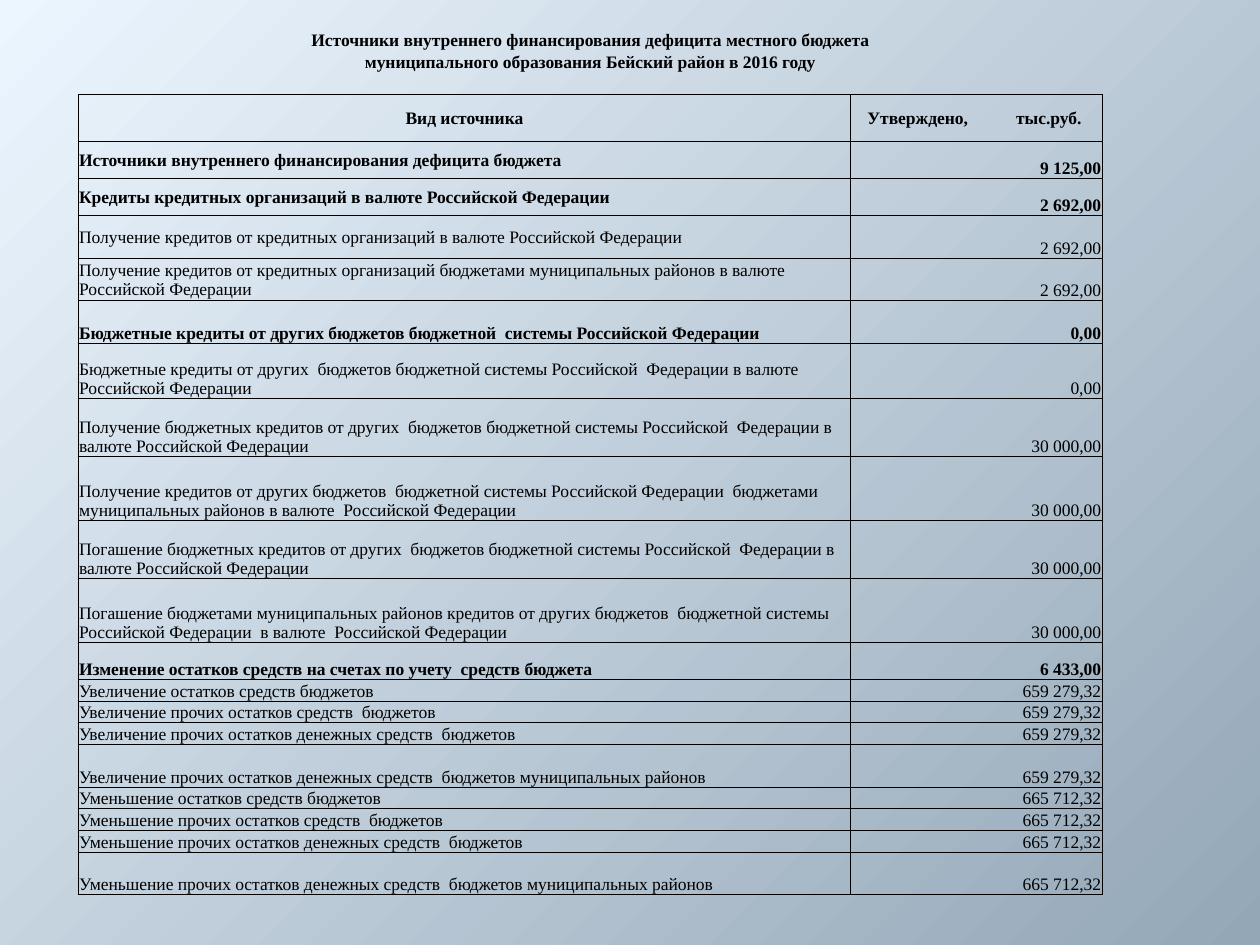
from dataclasses import dataclass
from lxml.etree import SubElement
from pptx import Presentation
from pptx.dml.color import RGBColor
from pptx.enum.text import MSO_ANCHOR, PP_ALIGN
from pptx.oxml.ns import qn
from pptx.slide import Slide
from pptx.table import Table, _Cell
from pptx.util import Pt

FONT, SIZE, INK = "Times New Roman", 10, "000000"
LEFT, TOP, COLS = 44.6, 16.6, (441.6, 143.6)
LINE, PAIR, BAND = 12.4, 24.4, 21.1  # common row heights
MID, LOW = MSO_ANCHOR.MIDDLE, MSO_ANCHOR.BOTTOM


@dataclass
class Row:
    label: str
    value: str
    high: float = LINE
    bold: bool = False
    anchor: MSO_ANCHOR = LOW


TITLE = ("Источники внутреннего финансирования дефицита местного бюджета",
         "муниципального образования Бейский район в 2016 году")
HEAD = Row("Вид источника", "Утверждено,\tтыс.руб.", 26.8, True, MID)
ROWS = [
    Row("Источники внутреннего финансирования дефицита бюджета", "9 125,00", BAND, True, MID),
    Row("Кредиты кредитных организаций в валюте Российской Федерации", "2 692,00", BAND, True, MID),
    Row("Получение кредитов от кредитных организаций в валюте Российской Федерации",
        "2 692,00", PAIR, anchor=MID),
    Row("Получение кредитов от кредитных организаций бюджетами муниципальных районов "
        "в валюте Российской Федерации", "2 692,00", PAIR, anchor=MID),
    Row("Бюджетные кредиты от других бюджетов бюджетной  системы Российской Федерации",
        "0,00", PAIR, True),
    Row("Бюджетные кредиты от других  бюджетов бюджетной системы Российской  Федерации "
        "в валюте Российской Федерации", "0,00", 31.5),
    Row("Получение бюджетных кредитов от других  бюджетов бюджетной системы Российской  "
        "Федерации в валюте Российской Федерации", "30 000,00", 33.2),
    Row("Получение кредитов от других бюджетов  бюджетной системы Российской Федерации  "
        "бюджетами муниципальных районов в валюте  Российской Федерации", "30 000,00", 36.5),
    Row("Погашение бюджетных кредитов от других  бюджетов бюджетной системы Российской  "
        "Федерации в валюте Российской Федерации", "30 000,00", 33.2),
    Row("Погашение бюджетами муниципальных районов кредитов от других бюджетов  бюджетной "
        "системы Российской Федерации  в валюте  Российской Федерации", "30 000,00", 36.5),
    Row("Изменение остатков средств на счетах по учету  средств бюджета", "6 433,00", BAND, True),
]
# The same four lines for growth and for decline
for verb, total in (("Увеличение", "659 279,32"), ("Уменьшение", "665 712,32")):
    for tail, high in (("остатков средств бюджетов", LINE),
                       ("прочих остатков средств  бюджетов", LINE),
                       ("прочих остатков денежных средств  бюджетов", LINE),
                       ("прочих остатков денежных средств  бюджетов муниципальных районов", PAIR)):
        ROWS.append(Row(f"{verb} {tail}", total, high))


def color(code: str) -> RGBColor:
    return RGBColor.from_string(code)


def shade(slide: Slide, start: str, end: str) -> None:
    """Fill the background from the top left corner outwards."""
    fill = slide.background.fill
    fill.gradient()
    for stop, code, place in zip(fill.gradient_stops, (start, end), (0, 1)):
        stop.color.rgb = color(code)
        stop.position = place
    grad = slide.element.find(".//" + qn("a:gradFill"))
    grad.remove(grad.find(qn("a:lin")))
    way = SubElement(grad, qn("a:path"), {"path": "circle"})
    SubElement(way, qn("a:fillToRect"), {"r": "100000", "b": "100000"})


def frame(cell: _Cell, sides: str) -> None:
    """Rule the named sides of a cell and clear the others."""
    cell.fill.background()
    props = cell._tc.get_or_add_tcPr()
    for spot, side in enumerate("LRTB"):
        line = SubElement(props, qn(f"a:ln{side}"), {"w": str(Pt(0.5))})
        if side in sides:
            solid = SubElement(line, qn("a:solidFill"))
            SubElement(solid, qn("a:srgbClr"), {"val": INK})
        else:
            SubElement(line, qn("a:noFill"))
        props.insert(spot, line)


def write(cell: _Cell, text: str, align: PP_ALIGN, anchor: MSO_ANCHOR, bold: bool) -> None:
    cell.margin_left = cell.margin_right = cell.margin_top = Pt(0.6)
    cell.margin_bottom = 0
    cell.vertical_anchor = anchor
    para = cell.text_frame.paragraphs[0]
    para.text = text
    para.alignment = align
    for run in para.runs:
        font = run.font
        font.name, font.size, font.bold = FONT, Pt(SIZE), bold
        font.color.rgb = color(INK)
    if not text:
        SubElement(para._p, qn("a:endParaRPr"), {"sz": str(SIZE * 100)})


def draw(table: Table, spot: int, row: Row, aligns: tuple) -> None:
    table.rows[spot].height = Pt(row.high)
    label, value = table.cell(spot, 0), table.cell(spot, 1)
    write(label, row.label, aligns[0], row.anchor, row.bold)
    write(value, row.value, aligns[1], MID if row is HEAD else LOW, row.bold)
    for cell in (label, value):
        frame(cell, "LRTB")


def main() -> None:
    deck = Presentation()
    deck.slide_width, deck.slide_height = Pt(720), Pt(540)
    slide = deck.slides.add_slide(deck.slide_layouts[6])
    shade(slide, "ECF6FF", "94A7B7")

    # Table grid
    top = len(TITLE) + 1
    count = top + 1 + len(ROWS)
    table = slide.shapes.add_table(count, 2, Pt(LEFT), Pt(TOP), Pt(sum(COLS)),
                                   Pt(LINE * count)).table
    table.first_row = table.horz_banding = False
    for col, wide in zip(table.columns, COLS):
        col.width = Pt(wide)

    # Title rows and the gap below them
    for spot, text in enumerate(TITLE + ("",)):
        table.rows[spot].height = Pt(LINE)
        for cell in table.rows[spot].cells:
            frame(cell, "" if text else "B")
            write(cell, "", PP_ALIGN.CENTER, LOW, True)
        if text:
            first = table.cell(spot, 0)
            first.merge(table.cell(spot, 1))
            write(first, text, PP_ALIGN.CENTER, LOW, True)

    # Heading, with a tab stop between its two words
    draw(table, top, HEAD, (PP_ALIGN.CENTER, PP_ALIGN.LEFT))
    cell = table.cell(top, 1)
    cell.margin_left = Pt(9.5)
    props = cell.text_frame.paragraphs[0]._p.get_or_add_pPr()
    tabs = SubElement(props, qn("a:tabLst"))
    SubElement(tabs, qn("a:tab"), {"pos": str(Pt(85)), "algn": "l"})

    # Sources and amounts
    for spot, row in enumerate(ROWS, top + 1):
        draw(table, spot, row, (PP_ALIGN.LEFT, PP_ALIGN.RIGHT))

    deck.save("out.pptx")


if __name__ == "__main__":
    main()
